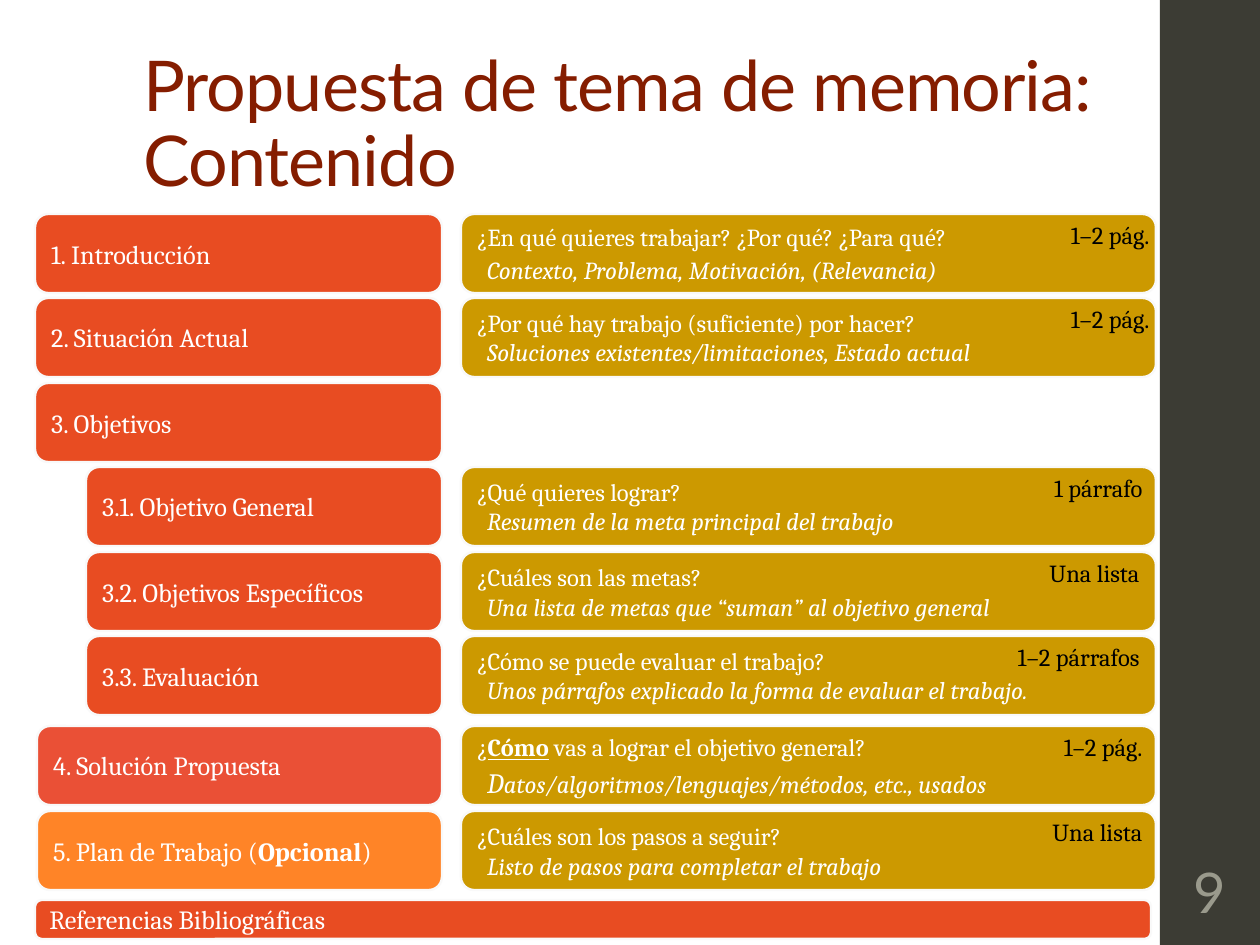
from pptx import Presentation, util as u
from pptx.dml.color import RGBColor
from pptx.enum import shapes, text

PX = 914400 / 126
ORANGE_RED = RGBColor(0xE8, 0x4C, 0x22)
CORAL = RGBColor(0xEA, 0x50, 0x36)
ORANGE = RGBColor(0xFF, 0x84, 0x27)
GOLD = RGBColor(0xCC, 0x99, 0x00)
OUTLINE = RGBColor(0xF9, 0xF9, 0xF9)
DARK = RGBColor(0x3C, 0x3C, 0x34)
TITLE_RED = RGBColor(0x85, 0x1D, 0x00)
GREY = RGBColor(0x9A, 0x9A, 0x8C)
WHITE = RGBColor(255, 255, 255)
BLACK = RGBColor(0, 0, 0)

prs = Presentation()
prs.slide_width, prs.slide_height = u.Inches(10), u.Inches(7.5)
slide = prs.slides.add_slide(prs.slide_layouts[6])


def add_box(box, fill=None, anchor=text.MSO_ANCHOR.MIDDLE,
            preset=shapes.MSO_SHAPE.ROUNDED_RECTANGLE):
    """Add a filled shape, or a plain text box when there is no fill."""
    place = [u.Emu(round(n * PX)) for n in box]
    if fill is None:
        part = slide.shapes.add_textbox(*place)
    else:
        part = slide.shapes.add_shape(preset, *place)
        part.shadow.inherit = False
        part.fill.solid()
        part.fill.fore_color.rgb = fill
        part.line.color.rgb = OUTLINE
        part.line.width = u.Pt(1.35)
    part.text_frame.word_wrap = True
    part.text_frame.vertical_anchor = anchor
    return part


def write(paragraph, runs, size, color, font="Cambria",
          align=text.PP_ALIGN.LEFT):
    """Write runs; those at odd positions are bold."""
    paragraph.alignment = align
    paragraph.font.size = u.Pt(size)
    paragraph.font.name = font
    paragraph.font.color.rgb = color
    for i, words in enumerate(runs):
        run = paragraph.add_run()
        run.text = words
        if i % 2:
            run.font.bold = True


# Sidebar with page number
sidebar = add_box((1160, 0, 100, 945), DARK, preset=shapes.MSO_SHAPE.RECTANGLE)
sidebar.line.fill.background()
page = add_box((1163, 850, 94, 82)).text_frame
page.margin_left = page.margin_right = u.Inches(0.03)
write(page.paragraphs[0], ["9"], 32, GREY, "Lato", text.PP_ALIGN.CENTER)

# Title
title = add_box((131, 13, 1002, 195), anchor=text.MSO_ANCHOR.BOTTOM)
heading = title.text_frame.paragraphs[0]
heading.line_spacing = 0.9
heading.font.size, heading.font.name = u.Pt(40), "Lato"
heading.font.color.rgb = TITLE_RED
heading.text = "Propuesta de tema de memoria:\vContenido"
for run in heading.runs:
    run.font._element.set("spc", "-50")

# Sections: left edge, fill, heading runs, question runs, answer, length, its right edge
sections = [
    (35, ORANGE_RED, ["1. Introducción"],
     ["¿En qué quieres trabajar? ¿Por qué? ¿Para qué?"],
     "Contexto, Problema, Motivación, (Relevancia)", "1–2 pág.", 1162),
    (35, ORANGE_RED, ["2. Situación Actual"],
     ["¿Por qué hay trabajo (suficiente) por hacer?"],
     "Soluciones existentes/limitaciones, Estado actual", "1–2 pág.", 1162),
    (35, ORANGE_RED, ["3. Objetivos"], None, None, None, None),
    (86, ORANGE_RED, ["3.1. Objetivo General"], ["¿Qué quieres lograr?"],
     "Resumen de la meta principal del trabajo", "1 párrafo", 1155),
    (86, ORANGE_RED, ["3.2. Objetivos Específicos"], ["¿Cuáles son las metas?"],
     "Una lista de metas que “suman” al objetivo general", "Una lista", 1152),
    (86, ORANGE_RED, ["3.3. Evaluación"], ["¿Cómo se puede evaluar el trabajo?"],
     "Unos párrafos explicado la forma de evaluar el trabajo.",
     "1–2 párrafos", 1152),
    (37, CORAL, ["4. Solución Propuesta"],
     ["¿", "Cómo", " vas a lograr el objetivo general?"],
     "Datos/algoritmos/lenguajes/métodos, etc., usados", "1–2 pág.", 1155),
    (37, ORANGE, ["5. Plan de Trabajo (", "Opcional", ")"],
     ["¿Cuáles son los pasos a seguir?"],
     "Listo de pasos para completar el trabajo", "Una lista", 1155),
]
ROW_HEIGHT, SECTION_RIGHT = 79, 442
for row, (left, fill, name, question, answer, length, right) in enumerate(sections):
    # The last two sections stand slightly apart from the objectives
    top = round(214 + 84.4 * row) + (6 if row > 5 else 0)
    section = add_box((left, top, SECTION_RIGHT - left, ROW_HEIGHT), fill)
    write(section.text_frame.paragraphs[0], name, 15, WHITE)
    if question is None:
        continue

    detail = add_box((461, top, 695, ROW_HEIGHT), GOLD).text_frame
    write(detail.paragraphs[0], question, 14, WHITE)
    for key_word in detail.paragraphs[0].runs[1:2]:
        key_word.font.underline = True
    reply = detail.add_paragraph()
    write(reply, [answer], 14, WHITE)
    reply.font.italic = True
    reply._p.get_or_add_pPr().set("marL", str(round(10 * PX)))
    if row in (0, 6):
        reply.space_before = u.Pt(2)
    if row == 6:
        # Larger initial letter
        reply.runs[0].text = answer[0]
        reply.runs[0].font.size = u.Pt(16)
        reply.add_run().text = answer[1:]

    extent = add_box((right - 215, top, 215, 43), anchor=text.MSO_ANCHOR.TOP)
    write(extent.text_frame.paragraphs[0], [length], 14, BLACK,
          align=text.PP_ALIGN.RIGHT)

# References bar
references = add_box((35, 900, 1116, 39), ORANGE_RED)
write(references.text_frame.paragraphs[0], ["Referencias Bibliográficas"], 15, WHITE)

prs.save("out.pptx")
